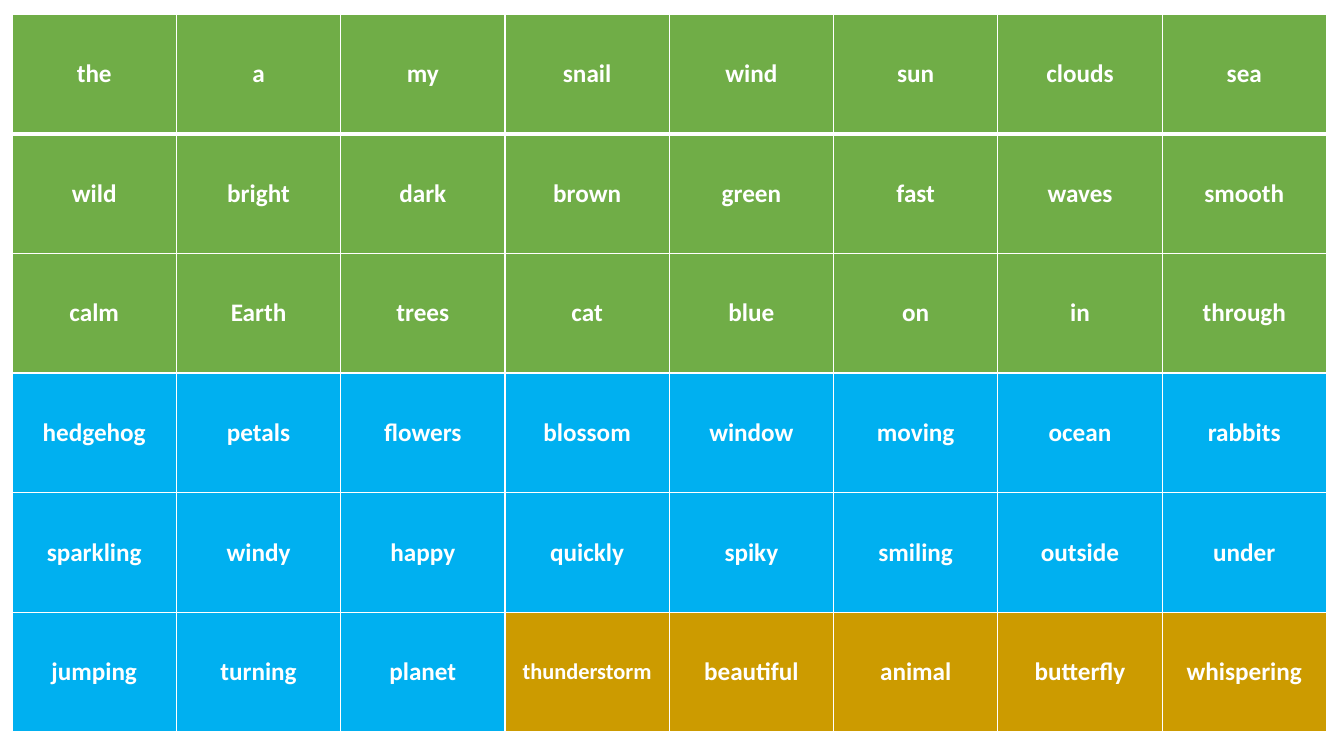
from dataclasses import dataclass

from lxml import etree
from pptx import Presentation
from pptx.dml.color import RGBColor
from pptx.enum import text
from pptx.oxml import ns
from pptx.table import _Cell
from pptx.util import Pt

WHITE = RGBColor(0xFF, 0xFF, 0xFF)
GREEN = RGBColor(0x70, 0xAD, 0x47)
BLUE = RGBColor(0x00, 0xB0, 0xF0)
GOLD = RGBColor(0xCC, 0x9B, 0x00)

COLUMNS, ROWS = 8, 6
LEFT, TOP = 8.64, 10.08
COLUMN_WIDTH, ROW_HEIGHT = 117.36, 85.44
THIN, THICK = 1, 3


@dataclass(frozen=True)
class WordBand:
    color: RGBColor
    words: str


BANDS = (
    WordBand(GREEN, "the a my snail wind sun clouds sea "
                    "wild bright dark brown green fast waves smooth "
                    "calm Earth trees cat blue on in through"),
    WordBand(BLUE, "hedgehog petals flowers blossom window moving ocean rabbits "
                   "sparkling windy happy quickly spiky smiling outside under "
                   "jumping turning planet"),
    WordBand(GOLD, "thunderstorm beautiful animal butterfly whispering"),
)


def write(cell: _Cell, wording: str, *, size: float = 18, font: str = "Calibri",
          color: RGBColor = WHITE, bold: bool = True) -> None:
    cell.vertical_anchor = text.MSO_ANCHOR.MIDDLE
    paragraph = cell.text_frame.paragraphs[0]
    paragraph.alignment = text.PP_ALIGN.CENTER
    run = paragraph.add_run()
    run.text = wording
    run.font.size = Pt(size)
    run.font.name = font
    run.font.bold = bold
    run.font.color.rgb = color


def add_borders(cell: _Cell, *, top: float, bottom: float) -> None:
    """Line all four sides in white; call before setting the cell's fill."""
    properties = cell._tc.get_or_add_tcPr()
    for side, width in (("L", THIN), ("R", THIN), ("T", top), ("B", bottom)):
        line = etree.SubElement(properties, ns.qn(f"a:ln{side}"), w=str(Pt(width)))
        fill = etree.SubElement(line, ns.qn("a:solidFill"))
        etree.SubElement(fill, ns.qn("a:srgbClr"), val=str(WHITE))


def main() -> None:
    presentation = Presentation()
    presentation.slide_width, presentation.slide_height = Pt(960), Pt(540)
    slide = presentation.slides.add_slide(presentation.slide_layouts[6])

    word_grid = slide.shapes.add_table(
        ROWS, COLUMNS, Pt(LEFT), Pt(TOP),
        Pt(COLUMNS * COLUMN_WIDTH), Pt(ROWS * ROW_HEIGHT)).table
    for column in word_grid.columns:
        column.width = Pt(COLUMN_WIDTH)
    for row in word_grid.rows:
        row.height = Pt(ROW_HEIGHT)

    banded_words = [(word, band.color) for band in BANDS for word in band.words.split()]
    for index, (word, color) in enumerate(banded_words):
        row_index, column_index = divmod(index, COLUMNS)
        cell = word_grid.cell(row_index, column_index)
        add_borders(cell, top=THICK if row_index == 1 else THIN,
                    bottom=THICK if row_index == 0 else THIN)
        cell.fill.solid()
        cell.fill.fore_color.rgb = color
        write(cell, word, size=16 if word == "thunderstorm" else 18)

    presentation.save("out.pptx")


if __name__ == "__main__":
    main()
